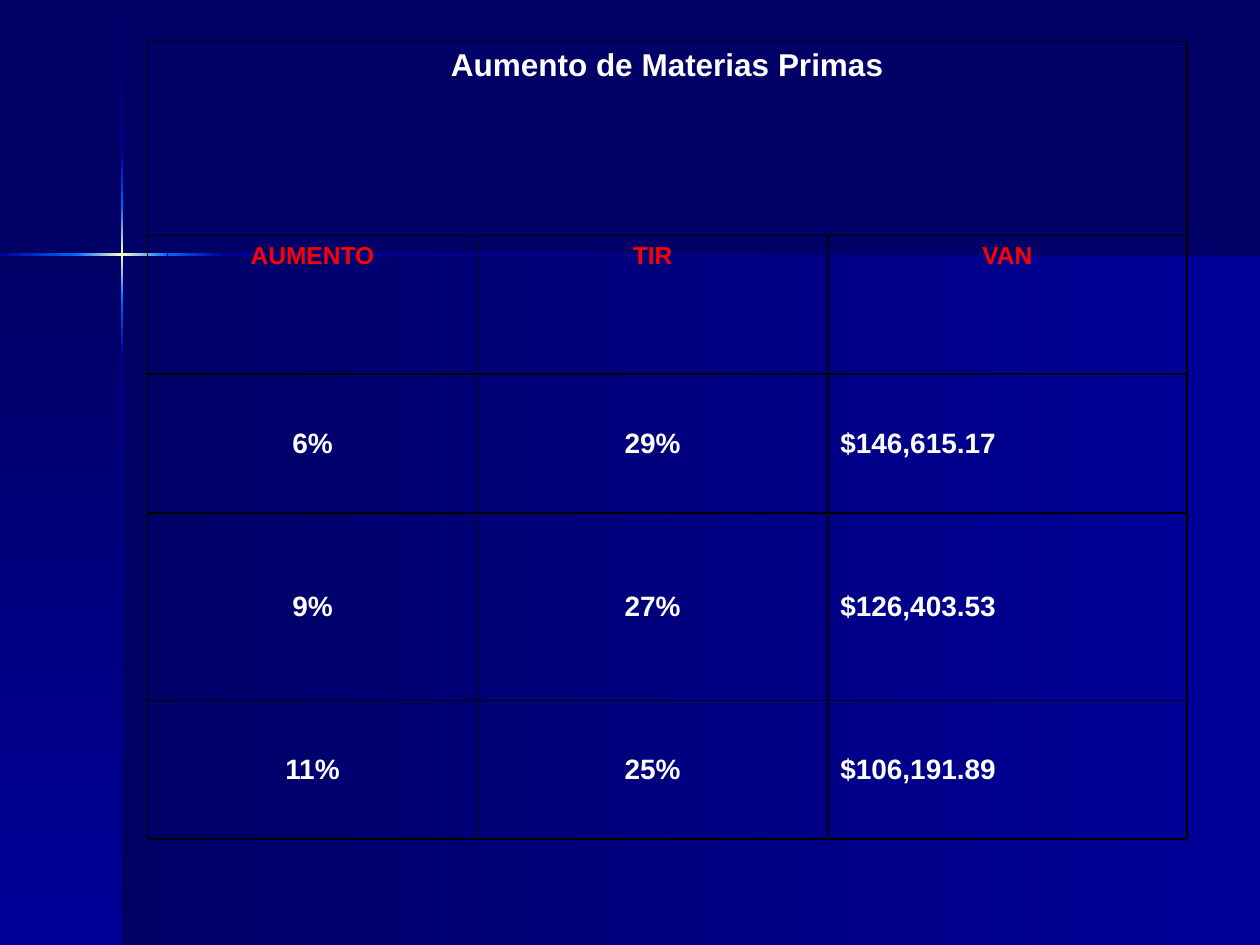
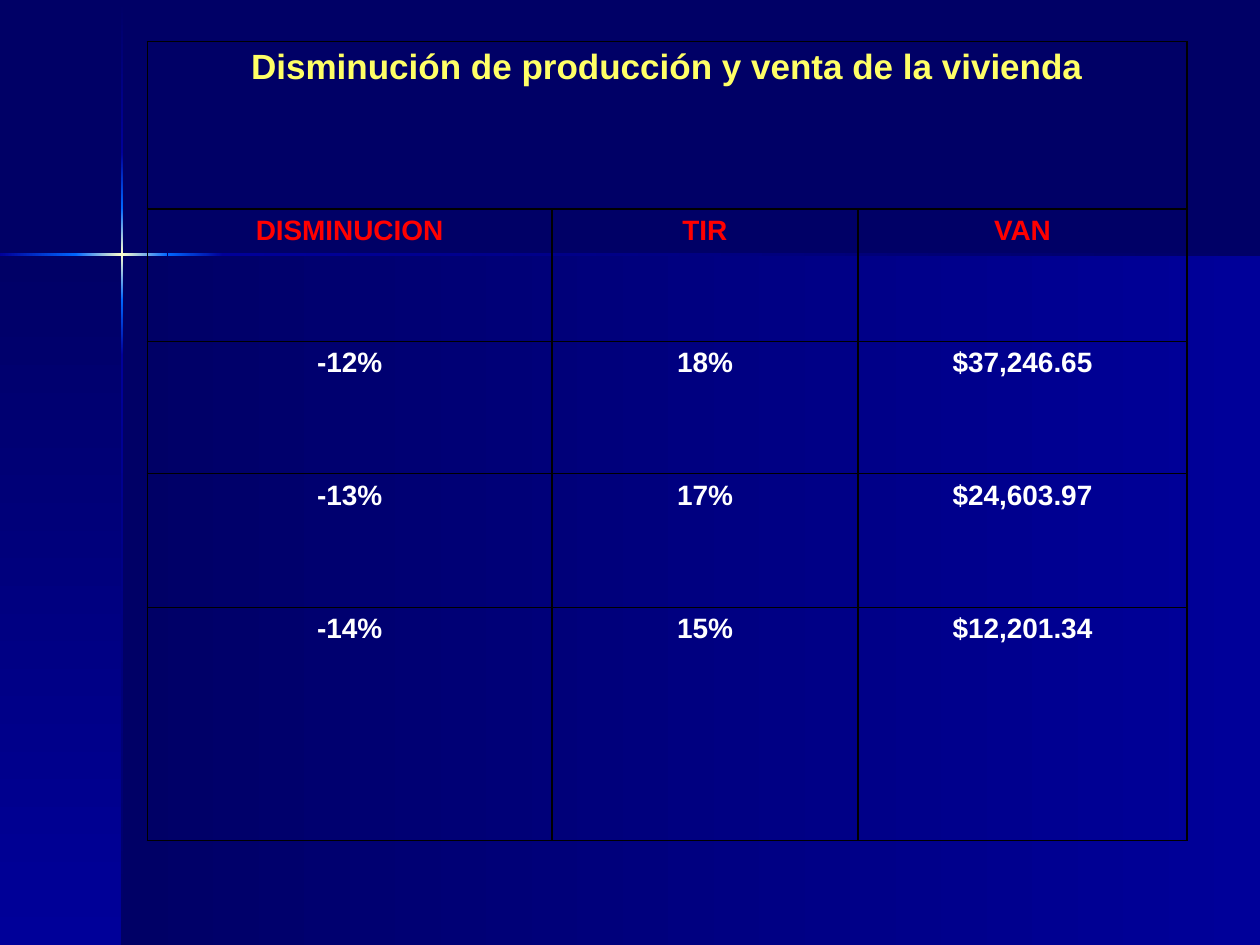
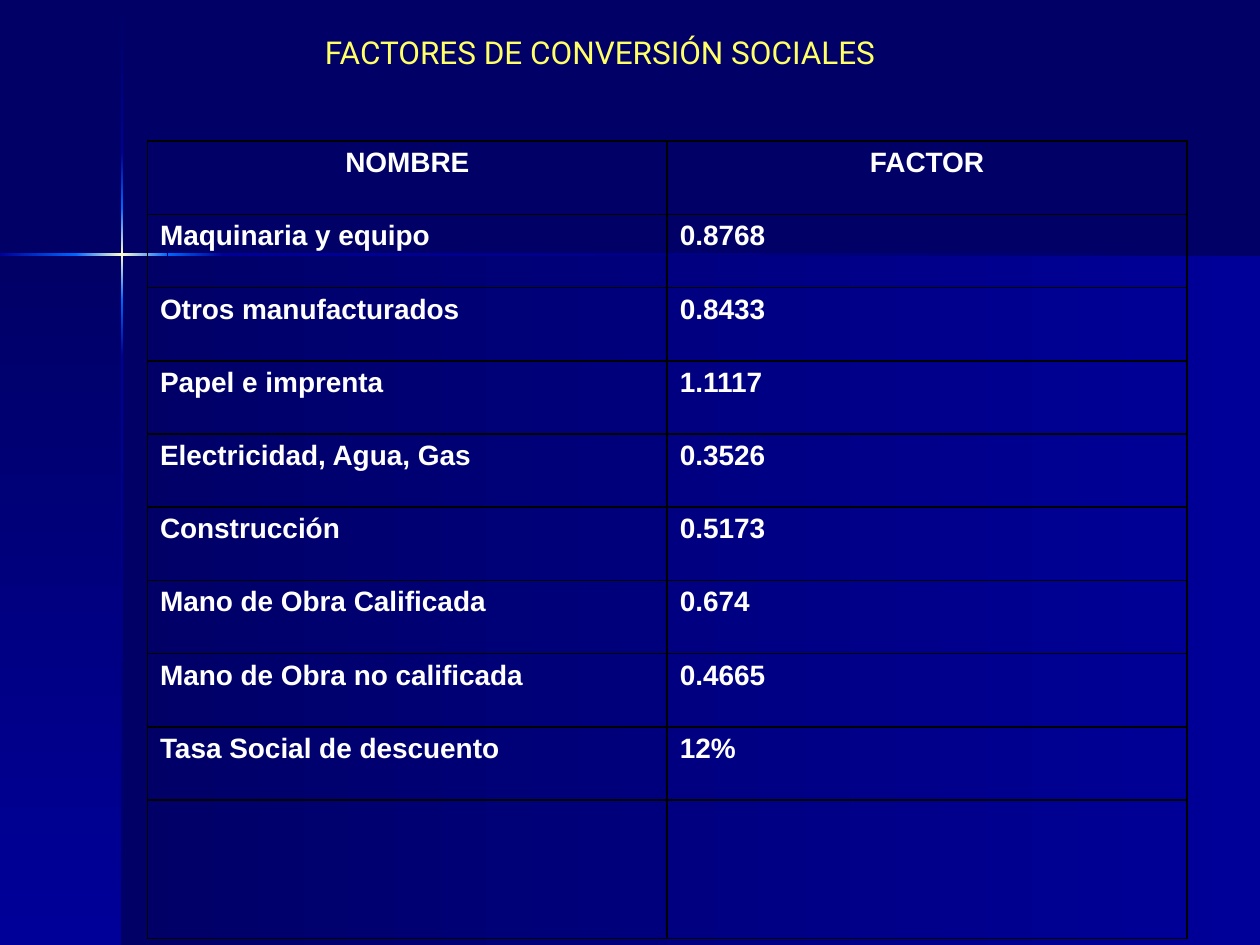
from lxml import etree
from pptx import Presentation
from pptx.dml.color import RGBColor
from pptx.enum.shapes import MSO_SHAPE
from pptx.enum.text import MSO_ANCHOR, MSO_AUTO_SIZE, PP_ALIGN
from pptx.oxml.ns import qn
from pptx.util import Emu, Pt

RECTANGLE = MSO_SHAPE.RECTANGLE
TOP, MIDDLE = MSO_ANCHOR.TOP, MSO_ANCHOR.MIDDLE
LEFT, CENTER, JUSTIFY = PP_ALIGN.LEFT, PP_ALIGN.CENTER, PP_ALIGN.JUSTIFY
FIT_SHAPE = MSO_AUTO_SIZE.SHAPE_TO_FIT_TEXT

EMU_PER_PX = 9144  # 100 px to the inch
SLIDE_WIDTH, SLIDE_HEIGHT = 1000, 750
BLANK_LAYOUT = 6

NAVY, BLUE, BRIGHT, GLOW = "000066", "000099", "0066FF", "FFFFCC"
WHITE, YELLOW, RED, BLACK = "FFFFFF", "FFFF66", "FF0000", "000000"
TABLE_FONT, TITLE_FONT = "Arial", "Roboto"
ACROSS, DOWN = 0, 90
TABLE_LEFT, TABLE_WIDTH = 117, 825

# left, top, width, height, direction, colours
BACKDROP = [
    (97, 202, 903, 548, ACROSS, (NAVY, BLUE)),
    (0, 202, 97, 548, DOWN, (NAVY, BLUE)),
    (96, 1, 2, 120, DOWN, (NAVY, BLUE)),
    (96, 282, 2, 468, DOWN, (BLUE, NAVY)),
    (177, 201, 823, 2, ACROSS, (BLUE, NAVY)),
    (96, 238, 2, 44, DOWN, (BRIGHT, BLUE)),
    (96, 121, 2, 44, DOWN, (BLUE, BRIGHT)),
    (96, 165, 2, 73, DOWN, (BRIGHT, GLOW, BRIGHT)),
    (0, 201, 61, 2, ACROSS, (BLUE, BRIGHT)),
    (133, 201, 44, 2, ACROSS, (BRIGHT, BLUE)),
    (60, 201, 73, 2, ACROSS, (BRIGHT, GLOW, BRIGHT)),
]

COST_ROWS = [
    ("AUMENTO", "TIR", "VAN"),
    ("6%", "29%", "$146,615.17"),
    ("9%", "27%", "$126,403.53"),
    ("11%", "25%", "$106,191.89"),
]
SALES_ROWS = [
    ("DISMINUCION", "TIR", "VAN"),
    ("-12%", "18%", "$37,246.65"),
    ("-13%", "17%", "$24,603.97"),
    ("-14%", "15%", "$12,201.34"),
]
FACTOR_ROWS = [
    ("NOMBRE", "FACTOR"),
    ("Maquinaria y equipo", "0.8768"),
    ("Otros manufacturados", "0.8433"),
    ("Papel e imprenta", "1.1117"),
    ("Electricidad, Agua, Gas", "0.3526"),
    ("Construcción", "0.5173"),
    ("Mano de Obra Calificada", "0.674"),
    ("Mano de Obra no calificada", "0.4665"),
    ("Tasa Social de descuento", "12%"),
]


def px(length):
    return Emu(round(length * EMU_PER_PX))


def color(value):
    return RGBColor.from_string(value)


def add_element(parent, tag, **attributes):
    return etree.SubElement(parent, qn(tag), attributes)


def add_gradient_band(slide, left, top, width, height, angle, colors):
    band = slide.shapes.add_shape(RECTANGLE, px(left), px(top), px(width), px(height))
    band.shadow.inherit = False
    band.line.fill.background()
    band.fill.gradient()
    # The public angle runs counter-clockwise
    band.fill.gradient_angle = -angle % 360
    stops = band.element.spPr.find(f".//{qn('a:gsLst')}")
    for stop in list(stops):
        stops.remove(stop)
    for index, value in enumerate(colors):
        position = index * 100000 // (len(colors) - 1)
        stop = add_element(stops, "a:gs", pos=str(position))
        add_element(stop, "a:srgbClr", val=value)
    return band


def move_to_layout(shape, layout):
    layout.shapes.element.append(shape.element)


def set_backdrop(deck, layout, slide):
    """Draw the shared backdrop once, on the layout that all slides use."""
    background = deck.slide_master.background.fill
    background.solid()
    background.fore_color.rgb = color(NAVY)
    for band in BACKDROP:
        move_to_layout(add_gradient_band(slide, *band), layout)


def write(frame, text, size, text_color, font, bold=False, align=LEFT):
    para = frame.paragraphs[0]
    para.text = text
    para.alignment = align
    for span in para.runs:
        span.font.name = font
        span.font.size = Pt(size)
        span.font.bold = bold
        span.font.color.rgb = color(text_color)


def frame_cell(cell):
    """Give the cell black borders and no fill."""
    properties = cell._tc.get_or_add_tcPr()
    for side in ("a:lnL", "a:lnR", "a:lnT", "a:lnB"):
        line = add_element(properties, side, w=str(Pt(1)))
        fill = add_element(line, "a:solidFill")
        add_element(fill, "a:srgbClr", val=BLACK)
    cell.fill.background()


def add_grid(slide, top, widths, heights):
    shape = slide.shapes.add_table(
        len(heights), len(widths), px(TABLE_LEFT), px(top), px(sum(widths)), px(sum(heights)))
    table = shape.table
    table.first_row = table.horz_banding = False
    for column, width in zip(table.columns, widths):
        column.width = px(width)
    for row, height in zip(table.rows, heights):
        row.height = px(height)
    for cell in table.iter_cells():
        frame_cell(cell)
    return table


def fill_rows(table, rows, first, header_size, header_color, aligns, anchor=TOP):
    """Write a header row at index first, and the data rows below it."""
    for row_index, values in enumerate(rows):
        is_header = row_index == 0
        size = header_size if is_header else 16
        text_color = header_color if is_header else WHITE
        for column_index, value in enumerate(values):
            cell = table.cell(first + row_index, column_index)
            cell.vertical_anchor = TOP if is_header else anchor
            align = CENTER if is_header else aligns[column_index]
            write(cell.text_frame, value, size, text_color, TABLE_FONT, True, align)


def add_table_title(table, text, size, text_color):
    title = table.cell(0, 0)
    title.merge(table.cell(0, len(table.columns) - 1))
    write(title.text_frame, text, size, text_color, TABLE_FONT, True, CENTER)


def add_slide_title(slide, text):
    box = slide.shapes.add_textbox(px(248), px(21), px(488), px(40))
    box.text_frame.word_wrap = True
    box.text_frame.auto_size = FIT_SHAPE
    write(box.text_frame, text, 18, YELLOW, TITLE_FONT)


def main():
    deck = Presentation()
    deck.slide_width, deck.slide_height = px(SLIDE_WIDTH), px(SLIDE_HEIGHT)
    layout = deck.slide_layouts[BLANK_LAYOUT]
    costs, sales, factors = [deck.slides.add_slide(layout) for _ in range(3)]
    set_backdrop(deck, layout, costs)

    table = add_grid(costs, 33, [262, 278, 285], [154, 110, 110, 149, 110])
    add_table_title(table, "Aumento de Materias Primas", 18, WHITE)
    fill_rows(table, COST_ROWS, 1, 14, RED, [CENTER, CENTER, LEFT], MIDDLE)

    table = add_grid(sales, 33, [321, 243, 261], [133, 105, 105, 106, 185])
    add_table_title(table, "Disminución de producción y venta de la vivienda", 20, YELLOW)
    fill_rows(table, SALES_ROWS, 1, 16, RED, [CENTER] * 3)

    row_count = len(FACTOR_ROWS)
    table = add_grid(factors, 112, [TABLE_WIDTH / 2] * 2, [523 / row_count] * row_count + [110])
    fill_rows(table, FACTOR_ROWS, 0, 16, WHITE, [JUSTIFY] * 2)
    add_slide_title(factors, "FACTORES DE CONVERSIÓN SOCIALES")

    deck.save("out.pptx")


if __name__ == "__main__":
    main()
